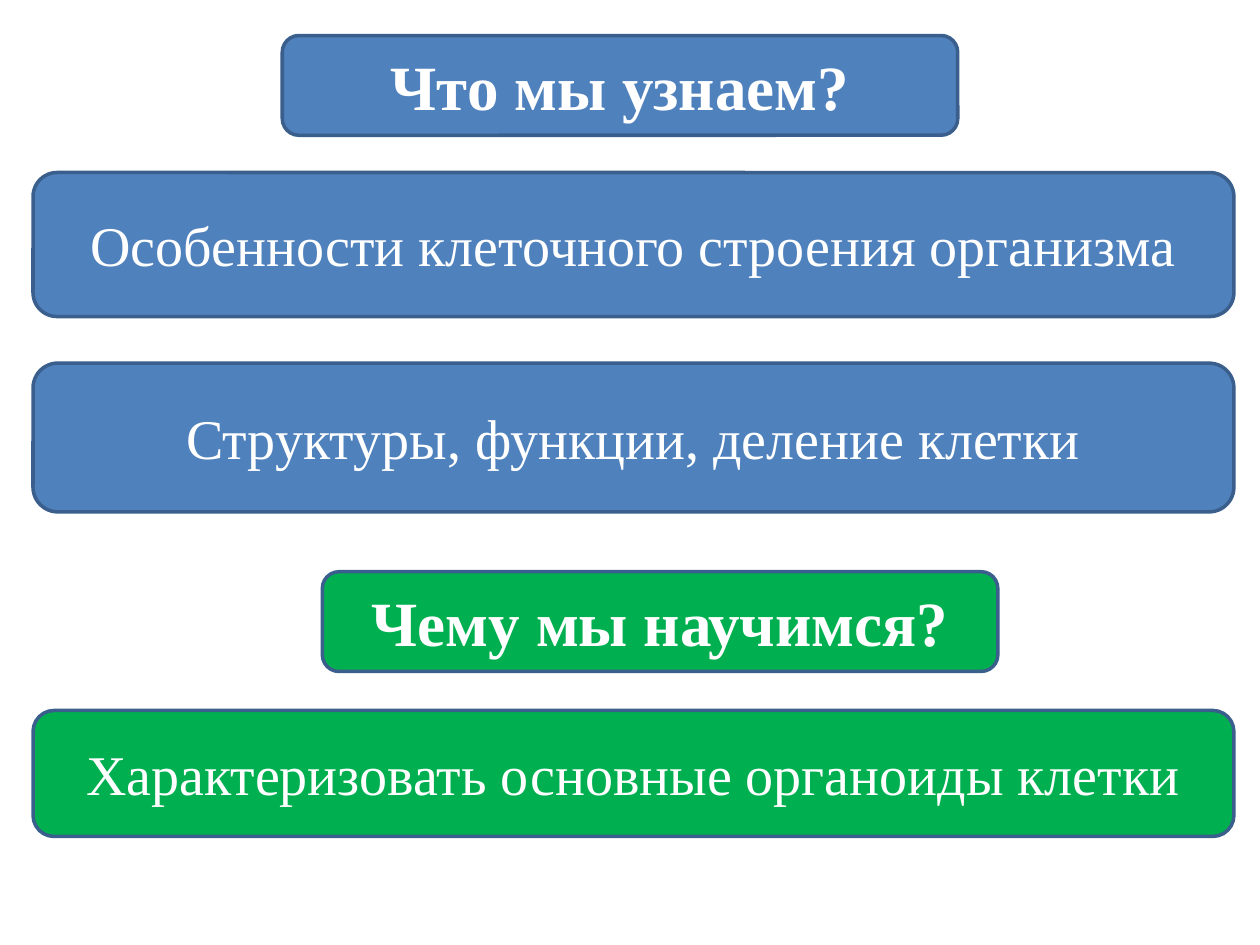
from pptx import Presentation
from pptx.dml.color import RGBColor
from pptx.enum import shapes, text
from pptx.util import Pt

COLORS = {"blue": "4F81BD", "green": "00B050", "outline": "3A5F8C", "text": "FFFFFF"}
FONT = "Times New Roman"
HEADING_WIDTH, HEADING_HEIGHT = 386, 57
TOPIC_LEFT, TOPIC_WIDTH = 18.9, 686.2

# Each section: colour, heading (text, left, top), topics (text, top, height)
SECTIONS = [
    ("blue", ("Что мы узнаем?", 161.3, 20.3), [
        ("Особенности клеточного строения организма", 98.6, 82.3),
        ("Структуры, функции, деление клетки", 207.5, 85),
    ]),
    ("green", ("Чему мы научимся?", 184.2, 326.7), [
        ("Характеризовать основные органоиды клетки", 406, 72),
    ]),
]


def rgb(color):
    return RGBColor.from_string(COLORS[color])


def add_panel(slide, words, box, *, fill, size, bold=False):
    """Add a rounded panel with centred words; box is left, top, width, height."""
    panel = slide.shapes.add_shape(
        shapes.MSO_SHAPE.ROUNDED_RECTANGLE, *(Pt(length) for length in box))
    panel.shadow.inherit = False
    panel.fill.solid()
    panel.fill.fore_color.rgb = rgb(fill)
    panel.line.color.rgb = rgb("outline")
    panel.line.width = Pt(2)
    frame = panel.text_frame
    frame.word_wrap = True
    frame.vertical_anchor = text.MSO_ANCHOR.MIDDLE
    paragraph = frame.paragraphs[0]
    paragraph.alignment = text.PP_ALIGN.CENTER
    run = paragraph.add_run()
    run.text = words
    run.font.name = FONT
    run.font.size = Pt(size)
    run.font.bold = bold
    run.font.color.rgb = rgb("text")


def main():
    deck = Presentation()
    deck.slide_width, deck.slide_height = Pt(720), Pt(540)
    slide = deck.slides.add_slide(deck.slide_layouts[6])
    for color, (heading, left, top), topics in SECTIONS:
        add_panel(slide, heading, (left, top, HEADING_WIDTH, HEADING_HEIGHT),
                  fill=color, size=36, bold=True)
        for topic, topic_top, height in topics:
            add_panel(slide, topic, (TOPIC_LEFT, topic_top, TOPIC_WIDTH, height),
                      fill=color, size=32)
    deck.save("out.pptx")


if __name__ == "__main__":
    main()
